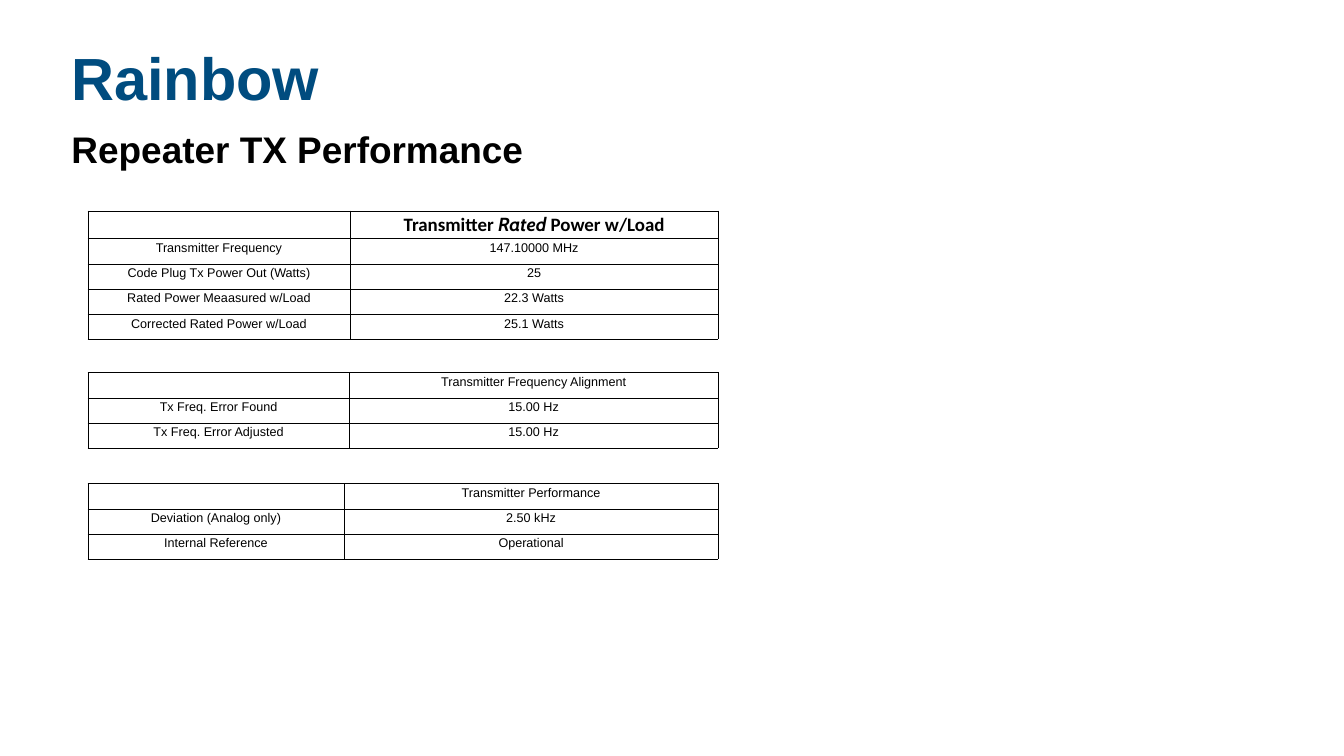
from lxml.etree import SubElement
from pptx import Presentation
from pptx.dml.color import RGBColor as RGB
from pptx.enum.text import PP_ALIGN as Align
from pptx.oxml.ns import qn
from pptx.util import Pt

# Content: a cell is a string, or a list of (text, font, italic) runs
HEADINGS = [
    # text, theme style, top, height, line spacing
    ("Rainbow", "title", 74.9, 113, 0.8),
    ("Repeater TX Performance", "subtitle", 177.1, 73.4, 1.0),
]
RATED_POWER = [
    ("Transmitter ", "Calibri", False),
    ("Rated", "Cabin", True),
    (" Power w/Load", "Calibri", False),
]
TABLES = [
    # top, label column width, rows
    (301, 375.1, [
        ("", RATED_POWER),
        ("Transmitter Frequency", "147.10000 MHz"),
        ("Code Plug Tx Power Out (Watts)", "25"),
        ("Rated Power Meaasured w/Load", "22.3 Watts"),
        ("Corrected Rated Power w/Load", "25.1 Watts"),
    ]),
    (532.1, 374, [
        ("", "Transmitter Frequency Alignment"),
        ("Tx Freq. Error Found", "15.00 Hz"),
        ("Tx Freq. Error Adjusted", "15.00 Hz"),
    ]),
    (690.5, 366.5, [
        ("", "Transmitter Performance"),
        ("Deviation (Analog only)", "2.50 kHz"),
        ("Internal Reference", "Operational"),
    ]),
]

THEME = {
    "font": "Arial",
    "title": (85, "004C7F", True),
    "subtitle": (52.8, "000000", True),
    "table head": (27, "000000", True),
    "cell": (18, "000000", False),
    "border": ("000000", 0.06),
}

SLIDE_W, SLIDE_H = 1920.24, 1080
HEADING_LEFT, HEADING_W = 95, 1730
TABLE_LEFT, TABLE_W, ROW_H = 125.3, 900.5, 36


def style(run, kind, font=THEME["font"], italic=False):
    size, color, bold = THEME[kind]
    run.font.name, run.font.size = font, Pt(size)
    run.font.bold, run.font.italic = bold, italic
    run.font.color.rgb = RGB.from_string(color)


def add_heading(slide, text, kind, top, height, spacing):
    frame = slide.shapes.add_textbox(
        Pt(HEADING_LEFT), Pt(top), Pt(HEADING_W), Pt(height)).text_frame
    frame.word_wrap = True
    frame.text = text
    heading = frame.paragraphs[0]
    heading.line_spacing = spacing
    style(heading.runs[0], kind)


def add_borders(cell):
    color, width = THEME["border"]
    properties = cell._tc.get_or_add_tcPr()
    for side in ("a:lnL", "a:lnR", "a:lnT", "a:lnB"):
        line = SubElement(properties, qn(side), w=str(int(Pt(width))))
        SubElement(SubElement(line, qn("a:solidFill")), qn("a:srgbClr"), val=color)


def fill_cell(cell, content):
    add_borders(cell)
    cell.fill.background()
    paragraph = cell.text_frame.paragraphs[0]
    paragraph.alignment = Align.CENTER
    if isinstance(content, str):
        paragraph.text = content
        for run in paragraph.runs:
            style(run, "cell")
    else:
        for text, font, italic in content:
            run = paragraph.add_run()
            run.text = text
            style(run, "table head", font, italic)


def add_measurements(slide, top, label_w, rows):
    table = slide.shapes.add_table(
        len(rows), 2, Pt(TABLE_LEFT), Pt(top), Pt(TABLE_W), Pt(ROW_H * len(rows))).table
    table.first_row = table.horz_banding = False
    table.columns[0].width = Pt(label_w)
    table.columns[1].width = Pt(TABLE_W - label_w)
    for r, row in enumerate(rows):
        for c, content in enumerate(row):
            fill_cell(table.cell(r, c), content)


def main():
    deck = Presentation()
    deck.slide_width, deck.slide_height = Pt(SLIDE_W), Pt(SLIDE_H)
    slide = deck.slides.add_slide(deck.slide_layouts[6])
    for heading in HEADINGS:
        add_heading(slide, *heading)
    for measurements in TABLES:
        add_measurements(slide, *measurements)
    deck.save("out.pptx")


if __name__ == "__main__":
    main()
